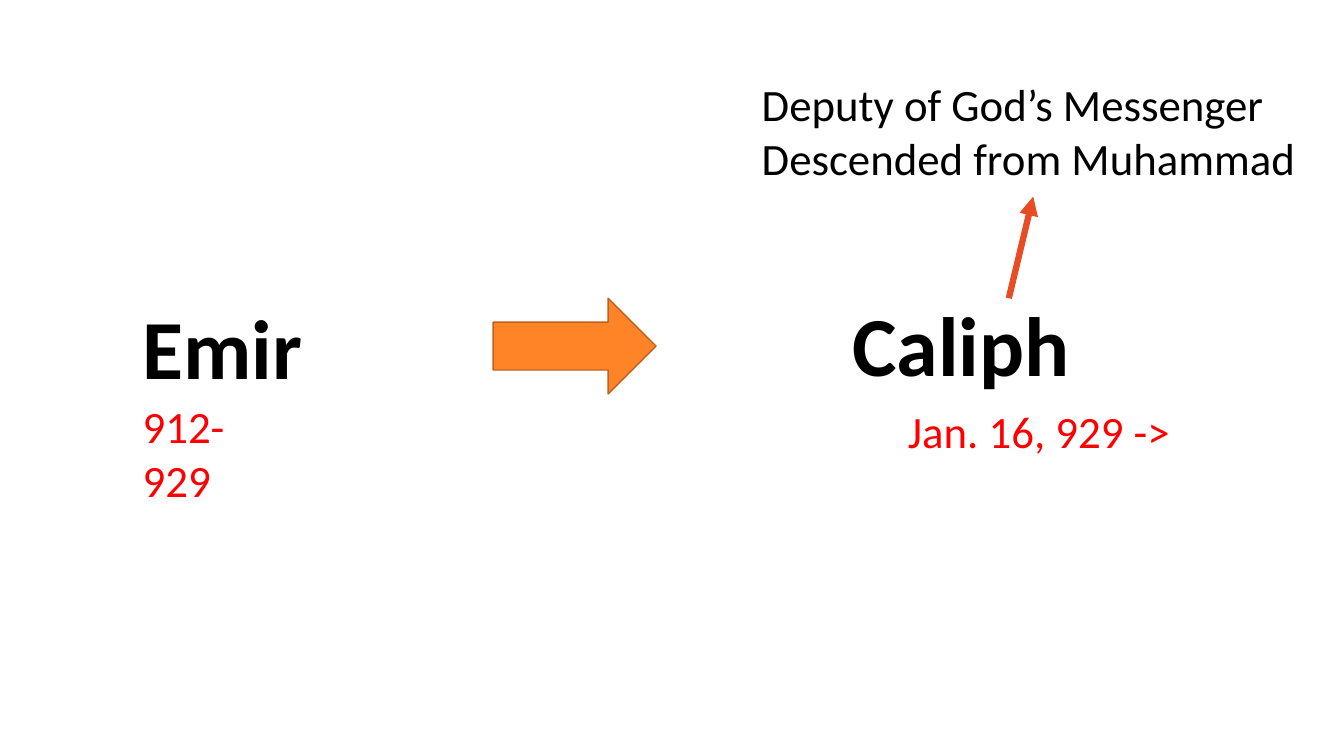
import pptx
import pptx.dml.color
import pptx.enum.shapes
import pptx.enum.text
import pptx.oxml.ns
import pptx.util
from lxml import etree

COLORS = {
    "ink": "000000",
    "date": "FF0000",
    "arrow": "FF8427",
    "arrow_edge": "BD621D",
    "pointer": "E84C22",
}
FONT = "Calibri"
COLUMNS = 16
ROWS = 9


def color(name):
    return pptx.dml.color.RGBColor.from_string(COLORS[name])


class Slide:
    """Draws on one page, with lengths in columns and rows of a grid."""

    def __init__(self, deck):
        self.page = deck.slides.add_slide(deck.slide_layouts[6])
        self.column = deck.slide_width / COLUMNS
        self.row = deck.slide_height / ROWS

    def place(self, *lengths):
        """Turn alternating columns and rows into slide units."""
        units = (self.column, self.row) * 2
        return [round(length * unit) for length, unit in zip(lengths, units)]

    def text(self, place, lines, size=32, ink="ink", bold=False):
        box = self.page.shapes.add_textbox(*self.place(*place))
        frame = box.text_frame
        frame.word_wrap = True
        frame.auto_size = pptx.enum.text.MSO_AUTO_SIZE.SHAPE_TO_FIT_TEXT
        frame.text = "\n".join(lines)
        for para in frame.paragraphs:
            para.font.name = FONT
            para.font.size = pptx.util.Pt(size)
            para.font.bold = bold
            para.font.color.rgb = color(ink)

    def block_arrow(self, place):
        arrow = self.page.shapes.add_shape(
            pptx.enum.shapes.MSO_SHAPE.RIGHT_ARROW, *self.place(*place))
        arrow.shadow.inherit = False
        arrow.fill.solid()
        arrow.fill.fore_color.rgb = color("arrow")
        arrow.line.color.rgb = color("arrow_edge")
        arrow.line.width = pptx.util.Pt(1)

    def pointer(self, start, end):
        pointer = self.page.shapes.add_connector(
            pptx.enum.shapes.MSO_CONNECTOR.STRAIGHT, *self.place(*start, *end))
        pointer.line.color.rgb = color("pointer")
        pointer.line.width = pptx.util.Pt(4.5)
        qn = pptx.oxml.ns.qn
        properties = pointer.element.spPr
        etree.SubElement(properties.find(qn("a:ln")), qn("a:tailEnd"), type="triangle")
        etree.SubElement(properties, qn("a:effectLst"))


def main():
    deck = pptx.Presentation()
    deck.slide_width = pptx.util.Inches(13.33)
    deck.slide_height = pptx.util.Inches(7.5)
    slide = Slide(deck)

    slide.text((1.58, 3.46, 2.26, 1.33), ["Emir"], size=60, bold=True)
    slide.text((1.58, 4.69, 1.94, 0.77), ["912-929"], ink="date")
    slide.block_arrow((5.87, 3.55, 1.94, 1.14))
    slide.text((10.03, 3.42, 2.93, 1.33), ["Caliph"], size=60, bold=True)
    slide.text((10.69, 4.75, 3.38, 0.77), ["Jan. 16, 929 ->"], ink="date")
    slide.pointer((12.01, 3.55), (12.3, 2.34))
    slide.text((8.95, 0.86, 6.88, 1.42),
               ["Deputy of God’s Messenger", "Descended from Muhammad"])

    deck.save("out.pptx")


if __name__ == "__main__":
    main()
